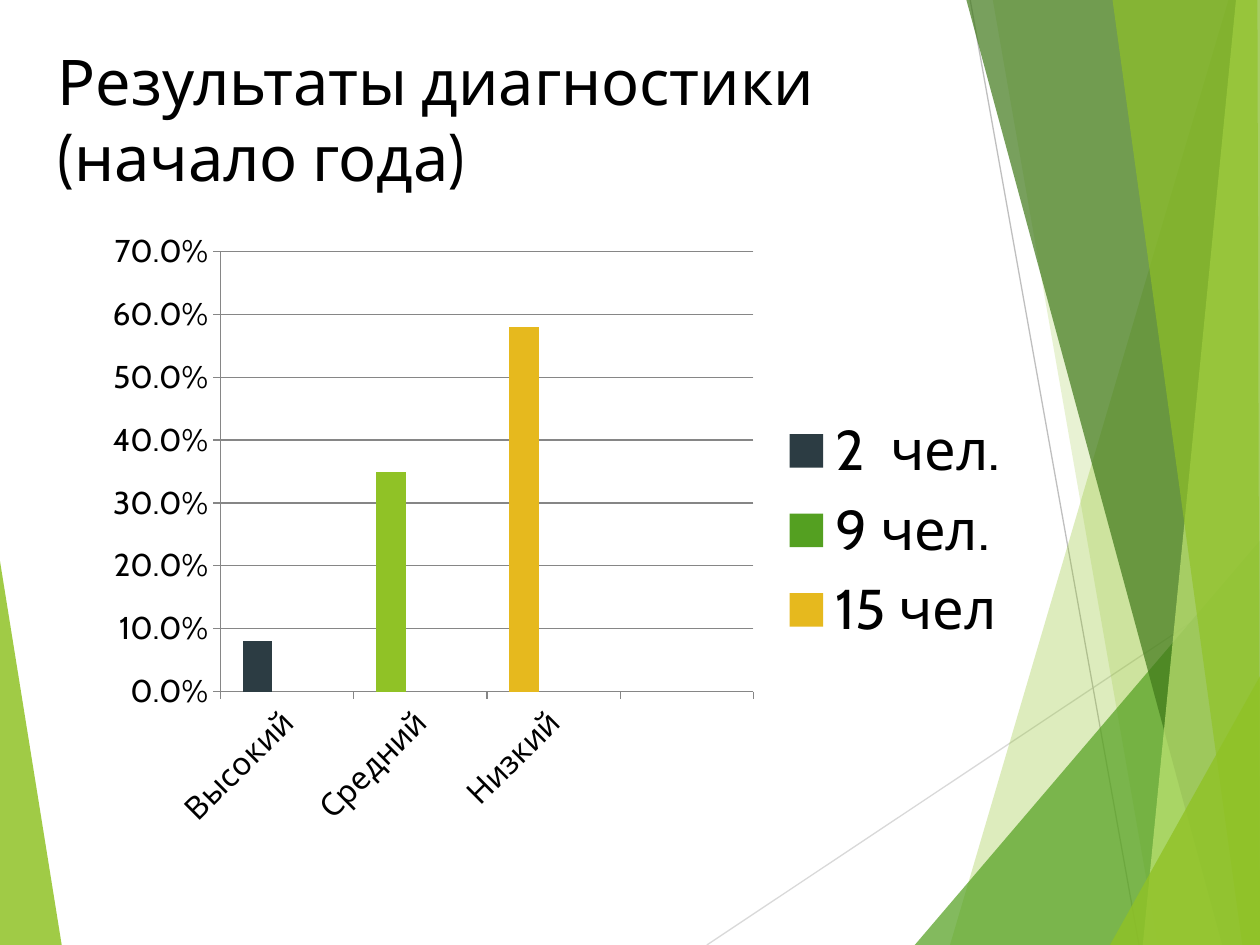
import dataclasses
import typing

import lxml.etree
import pptx
import pptx.chart.data
import pptx.dml.color
import pptx.enum.chart
import pptx.enum.shapes
import pptx.enum.text
import pptx.oxml
import pptx.oxml.ns
import pptx.util

Inches = pptx.util.Inches
Pt = pptx.util.Pt
qn = pptx.oxml.ns.qn
RGB = pptx.dml.color.RGBColor.from_string
Point = tuple[float, float]


@dataclasses.dataclass(frozen=True)
class Theme:
    font: str = "Cabin"
    ink: str = "000000"
    axis: str = "868686"
    lime: str = "90C226"
    green: str = "54A021"
    dark: str = "3F7819"
    pale: str = "C0E474"
    slate: str = "2C3C43"
    gold: str = "E6B91E"
    title: int = 36
    label: int = 18
    legend: int = 32


class Facet(typing.NamedTuple):
    points: list[Point]
    color: str
    alpha: int


class Ray(typing.NamedTuple):
    start: Point
    end: Point
    color: str


THEME = Theme()
W, H = 10, 7.5
EDGE = W + 0.01

WEDGE = Facet([(-0.01, 4.39), (0.49, H), (-0.01, H)], THEME.lime, 85)
RAYS = [
    Ray((5.61, H), (EDGE, 4.57), "D9D9D9"),
    Ray((7.7, 0), (9.04, H), "BFBFBF"),
]
FACETS = [
    Facet([(9.75, 0), (7.54, H), (EDGE, H), (EDGE, 0)], THEME.lime, 30),
    Facet([(7.88, 0), (9.19, H), (EDGE, H), (EDGE, 0)], THEME.lime, 20),
    Facet([(7.26, H), (W, 4.29), (EDGE, H)], THEME.green, 72),
    Facet([(7.67, 0), (9.7, H), (EDGE, H), (EDGE, 0)], THEME.dark, 70),
    Facet([(9.81, 0), (9.07, H), (EDGE, H), (W, 0)], THEME.pale, 70),
    Facet([(8.83, 0), (9.86, H), (W, H), (9.98, 0)], THEME.lime, 65),
    Facet([(8.81, H), (EDGE, 5.35), (EDGE, H)], THEME.lime, 80),
]

LEVELS = ["Высокий", "Средний", "Низкий", ""]
SHARES = [0.08, 0.35, 0.58, None]
GROUPS = {"2  чел.": THEME.slate, "9 чел.": THEME.green, "15 чел": THEME.gold}
BARS = [THEME.slate, THEME.lime, THEME.gold]


def apply(target: typing.Any, values: dict[str, typing.Any]) -> None:
    for name, value in values.items():
        setattr(target, name, value)


def style(font: typing.Any, size: int) -> None:
    apply(font, {"name": THEME.font, "size": Pt(size)})
    font.color.rgb = RGB(THEME.ink)


def paint(fill: typing.Any, color: str) -> None:
    fill.solid()
    fill.fore_color.rgb = RGB(color)


def draw_facet(shapes: typing.Any, facet: Facet) -> None:
    """Draw a closed, partly transparent polygon."""
    first, *rest = [(Inches(x), Inches(y)) for x, y in facet.points]
    pen = shapes.build_freeform(*first)
    pen.add_line_segments(rest, close=True)
    shape = pen.convert_to_shape()
    shape.shadow.inherit = False
    shape.line.fill.background()
    paint(shape.fill, facet.color)
    tint = shape._element.spPr.find(qn("a:solidFill"))[0]
    lxml.etree.SubElement(tint, qn("a:alpha"), val=str(facet.alpha * 1000))


def draw_ray(shapes: typing.Any, ray: Ray) -> None:
    ends = [Inches(n) for n in (*ray.start, *ray.end)]
    line = shapes.add_connector(pptx.enum.shapes.MSO_CONNECTOR.STRAIGHT, *ends)
    line.line.color.rgb = RGB(ray.color)
    line.line.width = Pt(0.75)
    lxml.etree.SubElement(line._element.spPr, qn("a:effectLst"))


def draw_title(shapes: typing.Any) -> None:
    box = shapes.add_textbox(Inches(0.36), Inches(0.29), Inches(6.94), Inches(1.44))
    frame = box.text_frame
    apply(frame, {"word_wrap": True, "vertical_anchor": pptx.enum.text.MSO_ANCHOR.TOP})
    par = frame.paragraphs[0]
    par.text = "Результаты диагностики\v(начало года)"
    for run in par.runs:
        style(run.font, THEME.title)


def place_plot(chart: typing.Any) -> None:
    """Fix the inner plot area as shares of the chart frame."""
    area = chart._chartSpace.chart.plotArea
    for old in area.findall(qn("c:layout")):
        area.remove(old)
    layout = lxml.etree.Element(qn("c:layout"))
    manual = lxml.etree.SubElement(layout, qn("c:manualLayout"))
    rules = {"layoutTarget": "inner", "xMode": "edge", "yMode": "edge",
             "x": "0.135", "y": "0.05", "w": "0.57", "h": "0.71"}
    for name, value in rules.items():
        lxml.etree.SubElement(manual, qn(f"c:{name}"), val=value)
    area.insert(0, layout)


def draw_chart(shapes: typing.Any) -> None:
    kinds = pptx.enum.chart
    data = pptx.chart.data.CategoryChartData(number_format="0.0%")
    data.categories = LEVELS
    blank = [None] * len(LEVELS)
    for spot, name in enumerate(GROUPS):
        data.add_series(name, blank if spot else SHARES)
    chart = shapes.add_chart(
        kinds.XL_CHART_TYPE.COLUMN_CLUSTERED,
        Inches(0.75), Inches(1.75), Inches(7.42), Inches(4.92), data,
    ).chart
    style(chart.font, THEME.label)
    apply(chart, {"has_title": False, "has_legend": True})
    apply(chart.legend, {"position": kinds.XL_LEGEND_POSITION.RIGHT,
                         "include_in_layout": False})
    style(chart.legend.font, THEME.legend)

    plot = chart.plots[0]
    apply(plot, {"gap_width": 150, "overlap": 0, "vary_by_categories": False})
    for group, color in zip(plot.series, GROUPS.values()):
        paint(group.format.fill, color)
    for spot, color in enumerate(BARS):
        paint(plot.series[0].points[spot].format.fill, color)

    cats, vals = chart.category_axis, chart.value_axis
    apply(vals, {"minimum_scale": 0, "maximum_scale": 0.7, "major_unit": 0.1,
                 "has_major_gridlines": True})
    apply(vals.tick_labels, {"number_format": "0.0%",
                             "number_format_is_linked": False})
    for axis in (cats, vals):
        axis.major_tick_mark = kinds.XL_TICK_MARK.OUTSIDE
        style(axis.tick_labels.font, THEME.label)
    for part in (cats, vals, vals.major_gridlines):
        part.format.line.color.rgb = RGB(THEME.axis)
        part.format.line.width = Pt(0.75)
    cats._element.find(qn("c:txPr")).find(qn("a:bodyPr")).set("rot", "-2700000")
    place_plot(chart)


def main() -> None:
    deck = pptx.Presentation()
    apply(deck, {"slide_width": Inches(W), "slide_height": Inches(H)})
    shapes = deck.slides.add_slide(deck.slide_layouts[6]).shapes
    draw_facet(shapes, WEDGE)
    for ray in RAYS:
        draw_ray(shapes, ray)
    for facet in FACETS:
        draw_facet(shapes, facet)
    draw_title(shapes)
    draw_chart(shapes)
    deck.save("out.pptx")


if __name__ == "__main__":
    main()
